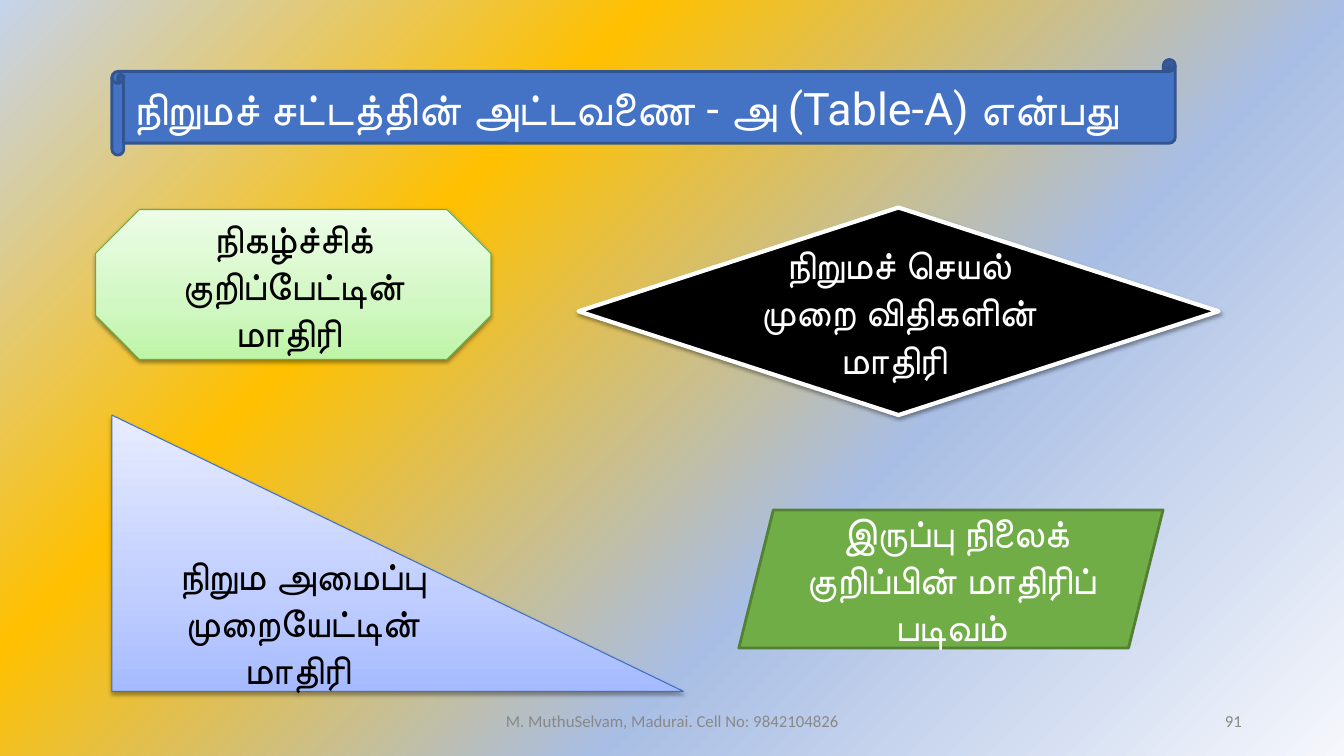
from lxml import etree
from pptx import Presentation
from pptx.dml.color import RGBColor
from pptx.enum.shapes import MSO_SHAPE
from pptx.enum.text import MSO_ANCHOR, MSO_AUTO_SIZE, PP_ALIGN
from pptx.oxml.ns import nsdecls, qn
from pptx.util import Cm, Pt

SCROLL = MSO_SHAPE.HORIZONTAL_SCROLL
OCTAGON = MSO_SHAPE.OCTAGON
DIAMOND = MSO_SHAPE.DIAMOND
TRIANGLE = MSO_SHAPE.RIGHT_TRIANGLE
PARALLELOGRAM = MSO_SHAPE.PARALLELOGRAM
MIDDLE = MSO_ANCHOR.MIDDLE
NO_AUTOFIT = MSO_AUTO_SIZE.NONE
LEFT, CENTER, RIGHT = PP_ALIGN.LEFT, PP_ALIGN.CENTER, PP_ALIGN.RIGHT

WHITE = RGBColor(0xFF, 0xFF, 0xFF)
BLACK = RGBColor(0x00, 0x00, 0x00)
GREY = RGBColor(0x88, 0x88, 0x88)
BLUE = RGBColor(0x44, 0x72, 0xC4)
DARK_BLUE = RGBColor(0x32, 0x54, 0x91)
MID_BLUE = RGBColor(0x3F, 0x6F, 0xC3)
GREEN = RGBColor(0x70, 0xAD, 0x47)
DARK_GREEN = RGBColor(0x53, 0x80, 0x35)
MID_GREEN = RGBColor(0x6D, 0xAC, 0x43)

BACKGROUND_STOPS = [
    (0, RGBColor(0xF5, 0xF7, 0xFC)),
    (36, RGBColor(0xA9, 0xBE, 0xE4)),
    (69, RGBColor(0xFF, 0xC0, 0x00)),
    (100, RGBColor(0xC5, 0xD3, 0xED)),
]
GREEN_STOPS = [
    (0, RGBColor(0xBE, 0xF5, 0xA7)),
    (35, RGBColor(0xD1, 0xF7, 0xC2)),
    (100, RGBColor(0xED, 0xFD, 0xE7)),
]
BLUE_STOPS = [
    (0, RGBColor(0xA6, 0xBB, 0xFF)),
    (35, RGBColor(0xC0, 0xCE, 0xFF)),
    (100, RGBColor(0xE7, 0xEC, 0xFF)),
]
UPWARD = '<a:lin ang="16200000" scaled="0"/>'
FROM_CORNER = ('<a:path path="circle">'
               '<a:fillToRect l="100000" t="100000"/></a:path>')
SHADOW = (f'<a:outerShdw {nsdecls("a")} blurRad="40000" dist="20000" '
          'dir="5400000" rotWithShape="0"><a:srgbClr val="000000">'
          '<a:alpha val="38000"/></a:srgbClr></a:outerShdw>')


def set_gradient(fill, properties, stops, direction):
    fill.solid()
    stop_xml = "".join(
        f'<a:gs pos="{position * 1000}"><a:srgbClr val="{color}"/></a:gs>'
        for position, color in stops)
    gradient = etree.fromstring(
        f'<a:gradFill {nsdecls("a")} rotWithShape="1">'
        f'<a:gsLst>{stop_xml}</a:gsLst>{direction}</a:gradFill>')
    properties.replace(properties.find(qn("a:solidFill")), gradient)


def paint_background(slide):
    fill = slide.background.fill
    fill.solid()
    properties = slide.element.find(".//" + qn("p:bgPr"))
    set_gradient(fill, properties, BACKGROUND_STOPS, FROM_CORNER)


def write(frame, text, size, color, align, font="Roboto"):
    frame.word_wrap = True
    frame.auto_size = NO_AUTOFIT
    frame.vertical_anchor = MIDDLE
    frame.text = text
    paragraph = frame.paragraphs[0]
    paragraph.alignment = align
    paragraph.font.name = font
    paragraph.font.size = Pt(size)
    paragraph.font.color.rgb = color


def add_figure(slide, kind, box, fill, line_color, line_width, shadow=False):
    figure = slide.shapes.add_shape(kind, *map(Cm, box))
    if isinstance(fill, list):
        set_gradient(figure.fill, figure.element.spPr, fill, UPWARD)
    else:
        figure.fill.solid()
        figure.fill.fore_color.rgb = fill
    figure.line.color.rgb = line_color
    figure.line.width = Pt(line_width)
    figure.shadow.inherit = False
    if shadow:
        effects = figure.element.spPr.find(qn("a:effectLst"))
        effects.append(etree.fromstring(SHADOW))
    return figure


def add_option(slide, text, color, *look):
    option = add_figure(slide, *look)
    write(option.text_frame, text, 28, color, CENTER)


def add_heading(slide, text):
    scroll = add_figure(slide, SCROLL, (2.82, 1.5, 26.8, 2.41),
                        BLUE, DARK_BLUE, 2)
    heading = slide.shapes.title
    heading.left, heading.top = Cm(3.12), Cm(1.8)
    heading.width, heading.height = Cm(26.2), Cm(1.81)
    write(heading.text_frame, text, 32, WHITE, LEFT)
    scroll.element.addnext(heading.element)


def add_footer(slide, text, left, width, align):
    footer = slide.shapes.add_textbox(Cm(left), Cm(17.65), Cm(width), Cm(1.02))
    write(footer.text_frame, text, 12, GREY, align, "Calibri")


def main():
    deck = Presentation()
    deck.slide_width, deck.slide_height = Cm(33.87), Cm(19.05)
    slide = deck.slides.add_slide(deck.slide_layouts[5])
    paint_background(slide)
    add_heading(slide, "நிறுமச் சட்டத்தின் அட்டவணை - அ (Table-A) என்பது ")
    add_option(slide, "நிகழ்ச்சிக் குறிப்பேட்டின் மாதிரி ", BLACK,
               OCTAGON, (2.41, 5.28, 9.96, 3.78),
               GREEN_STOPS, MID_GREEN, 0.75, True)
    add_option(slide, "நிறுமச் செயல் முறை விதிகளின் மாதிரி ", WHITE,
               DIAMOND, (14.58, 5.23, 16.13, 5.23), BLACK, WHITE, 3, True)
    add_option(slide, "நிறும அமைப்பு முறையேட்டின் மாதிரி ", BLACK,
               TRIANGLE, (2.82, 10.46, 14.4, 6.96),
               BLUE_STOPS, MID_BLUE, 0.75, True)
    add_option(slide, " இருப்பு நிலைக் குறிப்பின் மாதிரிப் படிவம்", WHITE,
               PARALLELOGRAM, (18.62, 12.85, 10.69, 3.48),
               GREEN, DARK_GREEN, 2)
    add_footer(slide, "M. MuthuSelvam, Madurai. Cell No: 9842104826",
               11.23, 11.43, CENTER)
    add_footer(slide, "91", 23.93, 7.62, RIGHT)
    deck.save("out.pptx")


if __name__ == "__main__":
    main()
